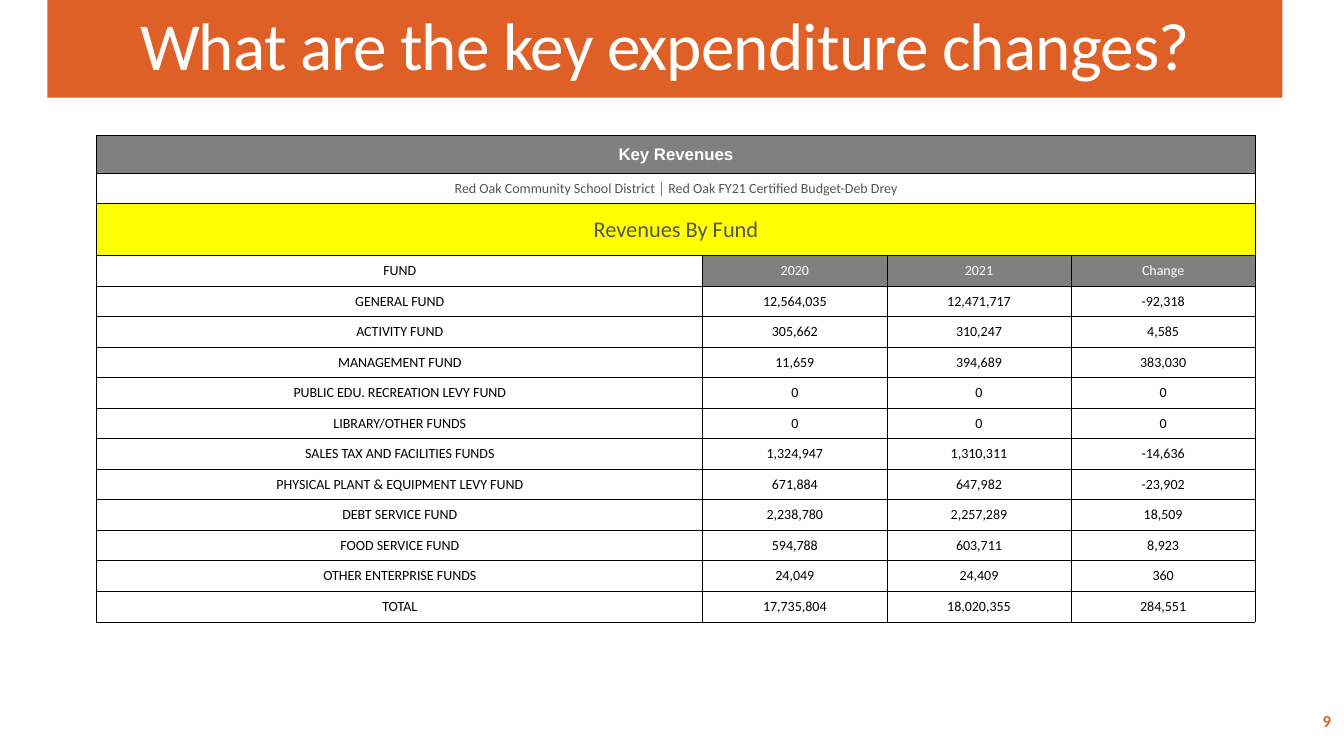
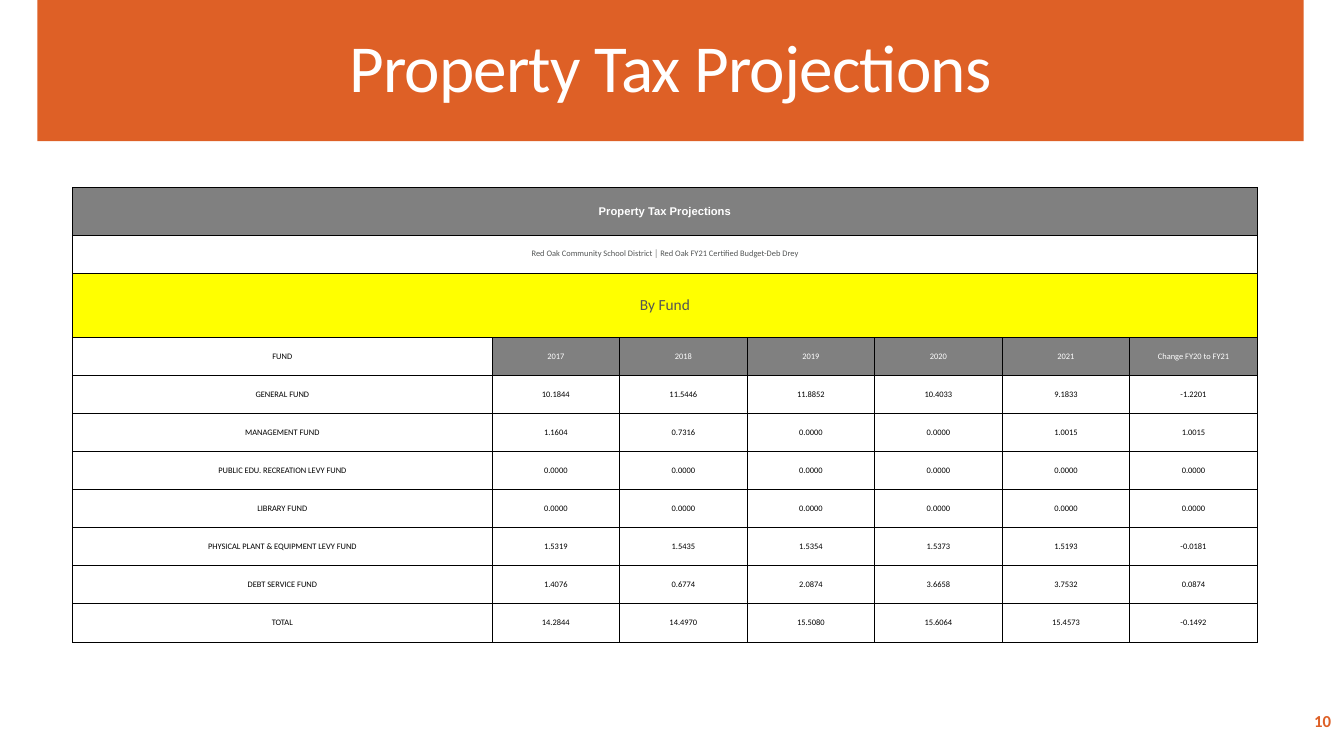
from lxml.etree import SubElement
from pptx import Presentation
from pptx.dml.color import RGBColor
from pptx.enum.text import MSO_ANCHOR as ANCHOR, MSO_AUTO_SIZE as AUTO, PP_ALIGN as ALIGN
from pptx.oxml.ns import qn
from pptx.util import Inches, Pt

ORANGE, GRAY, YELLOW = "DE6026", "808080", "FFFF00"
WHITE, BLACK, DARK_GRAY = "FFFFFF", "000000", "535555"
TITLE_ONLY = 5
SUBTITLE = "Red Oak Community School District │ Red Oak FY21 Certified Budget-Deb Drey"
BANNER_ROWS = [1.25, 1, 1.7]  # heights relative to a body row

REVENUE_HEAD = ["FUND", "2020", "2021", "Change"]
REVENUES = [
    ["GENERAL FUND", "12,564,035", "12,471,717", "-92,318"],
    ["ACTIVITY FUND", "305,662", "310,247", "4,585"],
    ["MANAGEMENT FUND", "11,659", "394,689", "383,030"],
    ["PUBLIC EDU. RECREATION LEVY FUND", "0", "0", "0"],
    ["LIBRARY/OTHER FUNDS", "0", "0", "0"],
    ["SALES TAX AND FACILITIES FUNDS", "1,324,947", "1,310,311", "-14,636"],
    ["PHYSICAL PLANT & EQUIPMENT LEVY FUND", "671,884", "647,982", "-23,902"],
    ["DEBT SERVICE FUND", "2,238,780", "2,257,289", "18,509"],
    ["FOOD SERVICE FUND", "594,788", "603,711", "8,923"],
    ["OTHER ENTERPRISE FUNDS", "24,049", "24,409", "360"],
    ["TOTAL", "17,735,804", "18,020,355", "284,551"],
]

TAX_HEAD = ["FUND", "2017", "2018", "2019", "2020", "2021", "Change FY20 to FY21"]
TAXES = [
    ["GENERAL FUND", "10.1844", "11.5446", "11.8852", "10.4033", "9.1833", "-1.2201"],
    ["MANAGEMENT FUND", "1.1604", "0.7316", "0.0000", "0.0000", "1.0015", "1.0015"],
    ["PUBLIC EDU. RECREATION LEVY FUND"] + ["0.0000"] * 6,
    ["LIBRARY FUND"] + ["0.0000"] * 6,
    ["PHYSICAL PLANT & EQUIPMENT LEVY FUND", "1.5319", "1.5435", "1.5354", "1.5373",
     "1.5193", "-0.0181"],
    ["DEBT SERVICE FUND", "1.4076", "0.6774", "2.0874", "3.6658", "3.7532", "0.0874"],
    ["TOTAL", "14.2844", "14.4970", "15.5080", "15.6064", "15.4573", "-0.1492"],
]


def rgb(color):
    return RGBColor.from_string(color)


def place(sp, box):
    sp.left, sp.top, sp.width, sp.height = (Inches(v) for v in box)


def add_borders(cell, color=BLACK, width=0.5):
    """Must run before the cell is filled: the schema wants lines first."""
    tc_pr = cell._tc.get_or_add_tcPr()
    for side in ("lnL", "lnR", "lnT", "lnB"):
        ln = SubElement(tc_pr, qn(f"a:{side}"), w=str(Pt(width)))
        fill = SubElement(ln, qn("a:solidFill"))
        SubElement(fill, qn("a:srgbClr"), val=color)


class Deck:
    """Holds the shared style and the slide being built."""

    def __init__(self):
        self.prs = Presentation()
        self.prs.slide_width, self.prs.slide_height = Inches(13.33), Inches(7.5)
        self.s = None

    def style(self, p, size, color, bold=False, font="Calibri", align=ALIGN.CENTER):
        p.alignment = align
        p.font.name, p.font.size, p.font.bold = font, Pt(size), bold
        p.font.color.rgb = rgb(color)

    def slide(self, title, band, number):
        self.s = self.prs.slides.add_slide(self.prs.slide_layouts[TITLE_ONLY])
        self.page_number(number)
        self.title(title, band)

    def title(self, text, band):
        sp = self.s.shapes.title
        place(sp, band)
        sp.fill.solid()
        sp.fill.fore_color.rgb = rgb(ORANGE)
        tf = sp.text_frame
        tf.text = text
        tf.auto_size, tf.vertical_anchor = AUTO.NONE, ANCHOR.MIDDLE
        p = tf.paragraphs[0]
        self.style(p, 48, WHITE)
        p.line_spacing = 0.9
        p.runs[0].font._element.set("spc", "-60")

    def page_number(self, number):
        tf = self.s.shapes.add_textbox(
            Inches(11.63), Inches(6.95), Inches(1.67), Inches(0.4)).text_frame
        tf.word_wrap, tf.vertical_anchor = True, ANCHOR.MIDDLE
        tf.text = str(number)
        self.style(tf.paragraphs[0], 12, ORANGE, bold=True, align=ALIGN.RIGHT)

    def cell(self, cell, text, size, color=BLACK, fill=None, **font):
        cell.text = text
        cell.vertical_anchor = ANCHOR.MIDDLE
        cell.margin_left = cell.margin_right = cell.margin_top = cell.margin_bottom = 0
        self.style(cell.text_frame.paragraphs[0], size, color, **font)
        if fill:
            cell.fill.solid()
            cell.fill.fore_color.rgb = rgb(fill)
        else:
            cell.fill.background()

    def fund_table(self, box, label_width, banners, head, body, sizes):
        """Three merged banner rows, a heading row, then one row per fund."""
        heading_size, text_size, section_size = sizes
        width, height = box[2:]
        ratios = BANNER_ROWS + [1] * (1 + len(body))
        frame = self.s.shapes.add_table(len(ratios), len(head), *(Inches(v) for v in box))
        table = frame.table
        table.first_row = table.horz_banding = False
        for row, ratio in zip(table.rows, ratios):
            row.height = Inches(height * ratio / sum(ratios))
        value_width = (width - label_width) / (len(head) - 1)
        for i, column in enumerate(table.columns):
            column.width = Inches(value_width if i else label_width)
        for cell in table.iter_cells():
            add_borders(cell)

        banner_styles = [
            dict(size=heading_size, color=WHITE, fill=GRAY, bold=True, font="Arial"),
            dict(size=text_size, color=DARK_GRAY),
            dict(size=section_size, color=DARK_GRAY, fill=YELLOW),
        ]
        for r, (text, style) in enumerate(zip(banners, banner_styles)):
            table.cell(r, 0).merge(table.cell(r, len(head) - 1))
            self.cell(table.cell(r, 0), text, **style)
        for r, values in enumerate([head] + body, len(banners)):
            for c, text in enumerate(values):
                is_heading = r == len(banners) and c > 0
                colors = dict(color=WHITE, fill=GRAY) if is_heading else {}
                self.cell(table.cell(r, c), text, text_size, **colors)


def main():
    deck = Deck()
    deck.slide("What are the key expenditure changes?", (0.47, 0, 12.25, 0.97), 9)
    deck.fund_table((0.96, 1.34, 11.49, 4.83), 6.01,
                    ["Key Revenues", SUBTITLE, "Revenues By Fund"],
                    REVENUE_HEAD, REVENUES, sizes=(12, 10, 16))

    deck.slide("Property Tax Projections", (0.37, 0, 12.56, 1.4), 10)
    deck.fund_table((0.72, 1.86, 11.75, 4.51), 4.16,
                    ["Property Tax Projections", SUBTITLE, "By Fund"],
                    TAX_HEAD, TAXES, sizes=(8, 6, 11))
    deck.prs.save("out.pptx")


if __name__ == "__main__":
    main()
